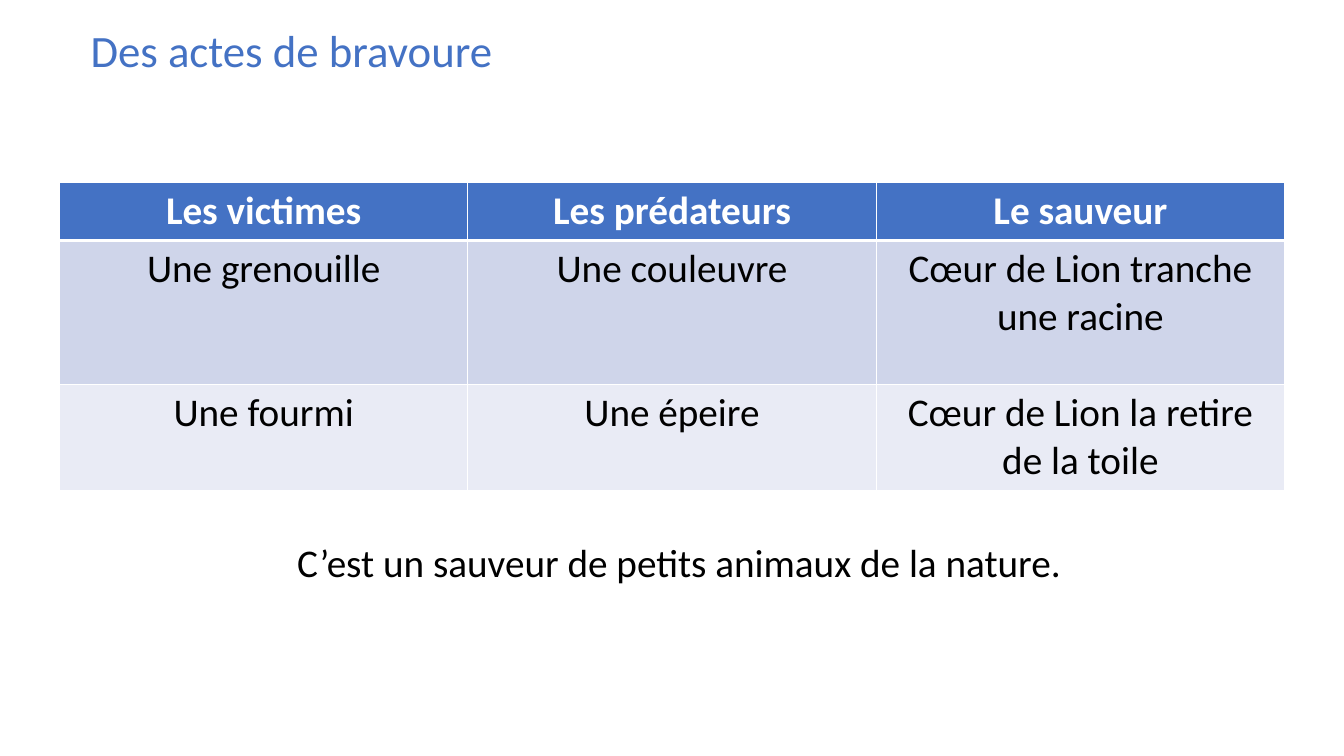
import pptx
import pptx.dml.color
import pptx.enum.text
import pptx.oxml
import pptx.oxml.ns
import pptx.util

WHITE = pptx.dml.color.RGBColor(0xFF, 0xFF, 0xFF)
BLACK = pptx.dml.color.RGBColor(0x00, 0x00, 0x00)
BLUE = pptx.dml.color.RGBColor(0x44, 0x72, 0xC4)
PERIWINKLE = pptx.dml.color.RGBColor(0xCF, 0xD5, 0xEA)
PALE_BLUE = pptx.dml.color.RGBColor(0xE9, 0xEB, 0xF5)

Inches, Pt = pptx.util.Inches, pptx.util.Pt
CENTER = pptx.enum.text.PP_ALIGN.CENTER

# Character formats
TITLE = {"size": Pt(32), "bold": False, "name": "Calibri"}
BODY = {"size": Pt(28), "bold": False, "name": "Calibri"}
HEADING = {"size": Pt(28), "bold": True, "name": "Calibri"}

# Height, fill, text colour and format of each table row
ROW_STYLES = [
    (0.54, BLUE, WHITE, HEADING),
    (1.43, PERIWINKLE, BLACK, BODY),
    (0.99, PALE_BLUE, BLACK, BODY),
]
BRAVE_DEEDS = [
    ("Les victimes", "Les prédateurs", "Le sauveur"),
    ("Une grenouille", "Une couleuvre", "Cœur de Lion tranche une racine"),
    ("Une fourmi", "Une épeire", "Cœur de Lion la retire de la toile"),
]


def write(paragraph, text, color, text_format):
    run = paragraph.add_run()
    run.text = text
    for attribute, value in text_format.items():
        setattr(run.font, attribute, value)
    run.font.color.rgb = color


def add_line_of_text(slide, box, text, color, text_format):
    frame = slide.shapes.add_textbox(*map(Inches, box)).text_frame
    frame.word_wrap = True
    write(frame.paragraphs[0], text, color, text_format)


def set_borders(cell, widths):
    properties = cell._tc.get_or_add_tcPr()
    for position, (side, width) in enumerate(widths.items()):
        border = pptx.oxml.parse_xml(
            f'<a:ln{side} {pptx.oxml.ns.nsdecls("a")} w="{Pt(width)}">'
            f'<a:solidFill><a:srgbClr val="{WHITE}"/></a:solidFill></a:ln{side}>'
        )
        properties.insert(position, border)


def add_deeds_table(slide, box):
    columns = len(BRAVE_DEEDS[0])
    deeds = slide.shapes.add_table(len(BRAVE_DEEDS), columns, *map(Inches, box)).table
    for column in deeds.columns:
        column.width = Inches(box[2] / columns)
    for r, (height, fill, color, text_format) in enumerate(ROW_STYLES):
        deeds.rows[r].height = Inches(height)
        for c, text in enumerate(BRAVE_DEEDS[r]):
            cell = deeds.cell(r, c)
            cell.fill.solid()
            cell.fill.fore_color.rgb = fill
            # A thick rule parts the headings from the deeds
            set_borders(cell, {"L": 1, "R": 1, "T": 3 if r == 1 else 1, "B": 3 if r == 0 else 1})
            paragraph = cell.text_frame.paragraphs[0]
            paragraph.alignment = CENTER
            write(paragraph, text, color, text_format)


def main():
    presentation = pptx.Presentation()
    presentation.slide_width = Inches(13.33)
    presentation.slide_height = Inches(7.5)
    slide = presentation.slides.add_slide(presentation.slide_layouts[6])

    # Table, conclusion, title
    add_deeds_table(slide, (0.59, 1.81, 12.15, 2.96))
    add_line_of_text(slide, (2.85, 5.29, 8.07, 0.57),
                     "C’est un sauveur de petits animaux de la nature.", BLACK, BODY)
    add_line_of_text(slide, (0.8, 0.18, 4.54, 0.64), "Des actes de bravoure", BLUE, TITLE)

    presentation.save("out.pptx")


if __name__ == "__main__":
    main()
